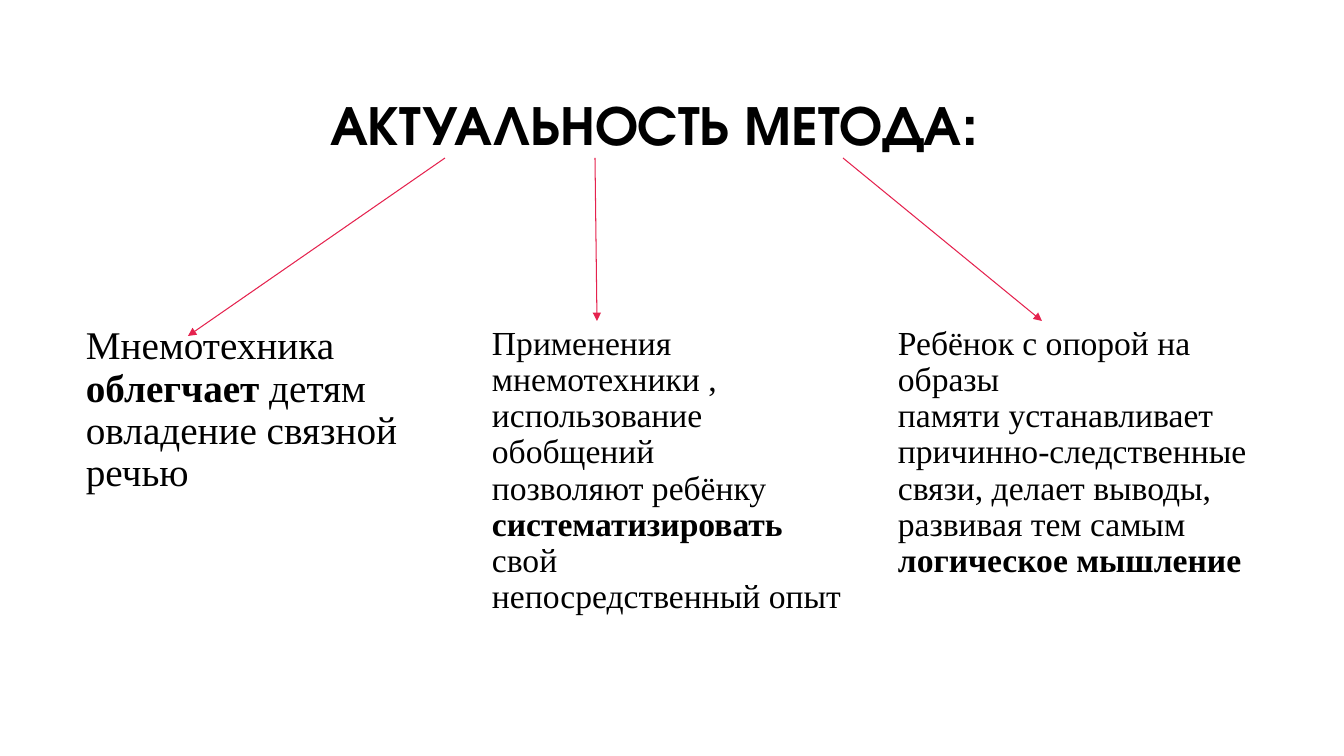
from lxml.etree import SubElement
from pptx import Presentation
from pptx.dml.color import RGBColor
from pptx.enum.shapes import MSO_CONNECTOR as Connector
from pptx.enum.text import MSO_ANCHOR as Anchor, PP_ALIGN as Align
from pptx.oxml.ns import qn
from pptx.util import Pt

PX = 914400 / 100.8
BLACK = RGBColor(0x00, 0x00, 0x00)
CRIMSON = RGBColor(0xE5, 0x22, 0x4E)
TITLE_FONT = "TeX Gyre Adventor"
BODY_FONT = "Times New Roman"

TITLE_BOX = (320, 87, 950, 144)
COLUMNS_BOX = (76, 321, 1193, 365)
COLUMN_GAP = 25
COLUMNS = [
    (28, ["Мнемотехника", "*облегчает* детям", "овладение связной", "речью"]),
    (24, ["Применения мнемотехники ,", "использование обобщений",
          "позволяют ребёнку", "*систематизировать* свой",
          "непосредственный опыт"]),
    (24, ["Ребёнок с опорой на образы", "памяти устанавливает",
          "причинно-следственные", "связи, делает выводы,",
          "развивая тем самым", "*логическое мышление*"]),
]
ARROWS = [
    ((445, 158), (188, 336)),
    ((595, 158), (597, 321)),
    ((843, 158), (1042, 321)),
]


def px(length):
    """Turn a length in px into EMU."""
    return round(length * PX)


def style(span, font, size, bold):
    """Format one run of text."""
    span.font.name = font
    span.font.size = Pt(size)
    span.font.bold = bold
    span.font.color.rgb = BLACK


def add_title(page, box):
    """Place the heading in the title placeholder."""
    title = page.shapes.title
    title.left, title.top, title.width, title.height = map(px, box)
    frame = title.text_frame
    frame.text = "АКТУАЛЬНОСТЬ МЕТОДА:"
    frame.word_wrap = True
    frame.vertical_anchor = Anchor.TOP
    frame.margin_top = px(10)
    para = frame.paragraphs[0]
    para.alignment = Align.LEFT
    para.line_spacing = 0.9
    style(para.runs[0], TITLE_FONT, 40, True)


def add_column(page, box, size, lines):
    """Write lines of text, with the words between asterisks in bold."""
    frame = page.shapes.add_textbox(*map(px, box)).text_frame
    frame.word_wrap = True
    para = frame.paragraphs[0]
    para.line_spacing = 0.9
    for row, line in enumerate(lines):
        if row:
            para.add_line_break()
        for index, part in enumerate(line.split("*")):
            if part:
                span = para.add_run()
                span.text = part
                style(span, BODY_FONT, size, index % 2 == 1)


def add_columns(page, box):
    """Share the box equally among the columns."""
    left, top, width, height = box
    count = len(COLUMNS)
    column_width = (width - COLUMN_GAP * (count - 1)) // count
    for index, (size, lines) in enumerate(COLUMNS):
        column_left = left + index * (column_width + COLUMN_GAP)
        add_column(page, (column_left, top, column_width, height), size, lines)


def add_arrow(page, start, end):
    """Draw a thin arrow from start to end."""
    arrow = page.shapes.add_connector(
        Connector.STRAIGHT, *map(px, start + end))
    arrow.line.color.rgb = CRIMSON
    arrow.line.width = Pt(0.75)
    SubElement(arrow.line._get_or_add_ln(), qn("a:tailEnd"), type="triangle")
    SubElement(arrow._element.spPr, qn("a:effectLst"))


def main():
    """Build the slide and save it."""
    deck = Presentation()
    deck.slide_width, deck.slide_height = px(1344), px(756)
    page = deck.slides.add_slide(deck.slide_layouts[5])
    add_title(page, TITLE_BOX)
    add_columns(page, COLUMNS_BOX)
    for start, end in ARROWS:
        add_arrow(page, start, end)
    deck.save("out.pptx")


if __name__ == "__main__":
    main()
